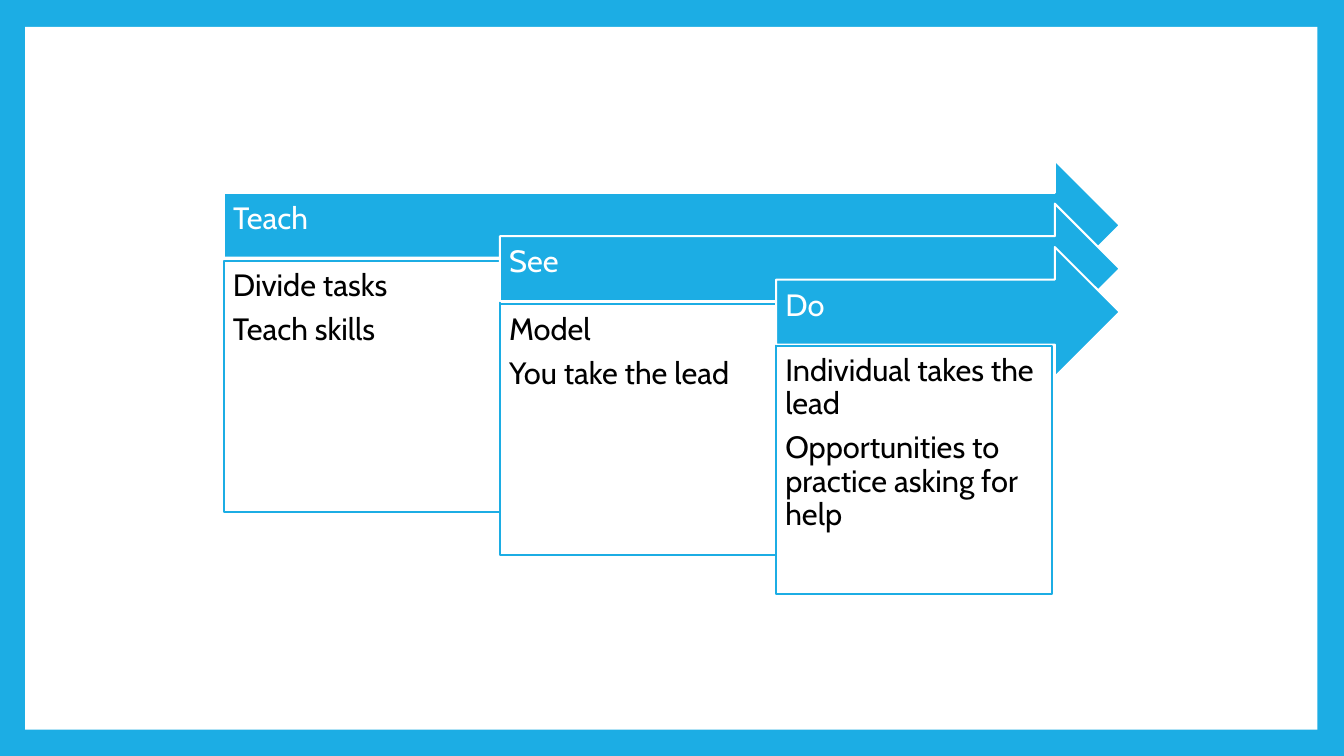
from pptx import Presentation
from pptx import util as u
from pptx.dml.color import RGBColor
from pptx.enum import shapes, text

BLUE, WHITE, BLACK = "1CADE4", "FFFFFF", "000000"
LEFT, RIGHT, STAGE_WIDTH = 159.84, 799.92, 197.28
ARROW_TOP, ARROW_STEP, ARROW_HEIGHT = 114.48, 31, 92.88
INSET = 6.6

# Heading, tasks, top and height of the task box
STAGES = [
    ("Teach", ["Divide tasks", "Teach skills"], 186.48, 179.28),
    ("See", ["Model", "You take the lead"], 217.44, 179.28),
    ("Do", ["Individual takes the lead",
            "Opportunities to practice asking for help"], 246.96, 177.12),
]


def colour(value):
    return RGBColor.from_string(value)


def set_all(target, values):
    for name, value in values.items():
        setattr(target, name, value)


def add_block(page, kind, place, fill, line=None):
    box = page.shapes.add_shape(kind, *(u.Pt(length) for length in place))
    box.shadow.inherit = False
    box.fill.solid()
    box.fill.fore_color.rgb = colour(fill)
    if line:
        box.line.color.rgb = colour(line)
        box.line.width = u.Pt(1.5)
    else:
        box.line.fill.background()
    return box


def write(box, lines, ink, anchor, right=INSET, bottom=INSET):
    frame = box.text_frame
    set_all(frame, {
        "word_wrap": True, "vertical_anchor": anchor,
        "margin_left": u.Pt(INSET), "margin_top": u.Pt(INSET),
        "margin_right": u.Pt(right), "margin_bottom": u.Pt(bottom),
    })
    for index, line in enumerate(lines):
        para = frame.add_paragraph() if index else frame.paragraphs[0]
        set_all(para, {"alignment": text.PP_ALIGN.LEFT,
                       "line_spacing": 0.9, "space_after": u.Pt(7.7)})
        span = para.add_run()
        span.text = line
        set_all(span.font, {"name": "Cabin", "size": u.Pt(22)})
        span.font.color.rgb = colour(ink)


def add_stage(page, index, heading, tasks, top, height):
    """Add an arrow that ends at the shared right edge, and its task box."""
    left = LEFT + index * STAGE_WIDTH
    arrow_place = (left, ARROW_TOP + index * ARROW_STEP,
                   RIGHT - left, ARROW_HEIGHT)
    arrow = add_block(page, shapes.MSO_SHAPE.RIGHT_ARROW, arrow_place,
                      BLUE, WHITE)
    write(arrow, [heading], WHITE, text.MSO_ANCHOR.MIDDLE, 20, 15)
    box = add_block(page, shapes.MSO_SHAPE.RECTANGLE,
                    (left, top, STAGE_WIDTH, height), WHITE, BLUE)
    write(box, tasks, BLACK, text.MSO_ANCHOR.TOP)


def main():
    deck = Presentation()
    set_all(deck, {"slide_width": u.Pt(960), "slide_height": u.Pt(540)})
    page = deck.slides.add_slide(deck.slide_layouts[6])
    page.background.fill.solid()
    page.background.fill.fore_color.rgb = colour(BLUE)
    add_block(page, shapes.MSO_SHAPE.RECTANGLE, (18, 19.2, 923, 502), WHITE)
    for index, stage in enumerate(STAGES):
        add_stage(page, index, *stage)
    deck.save("out.pptx")


if __name__ == "__main__":
    main()
